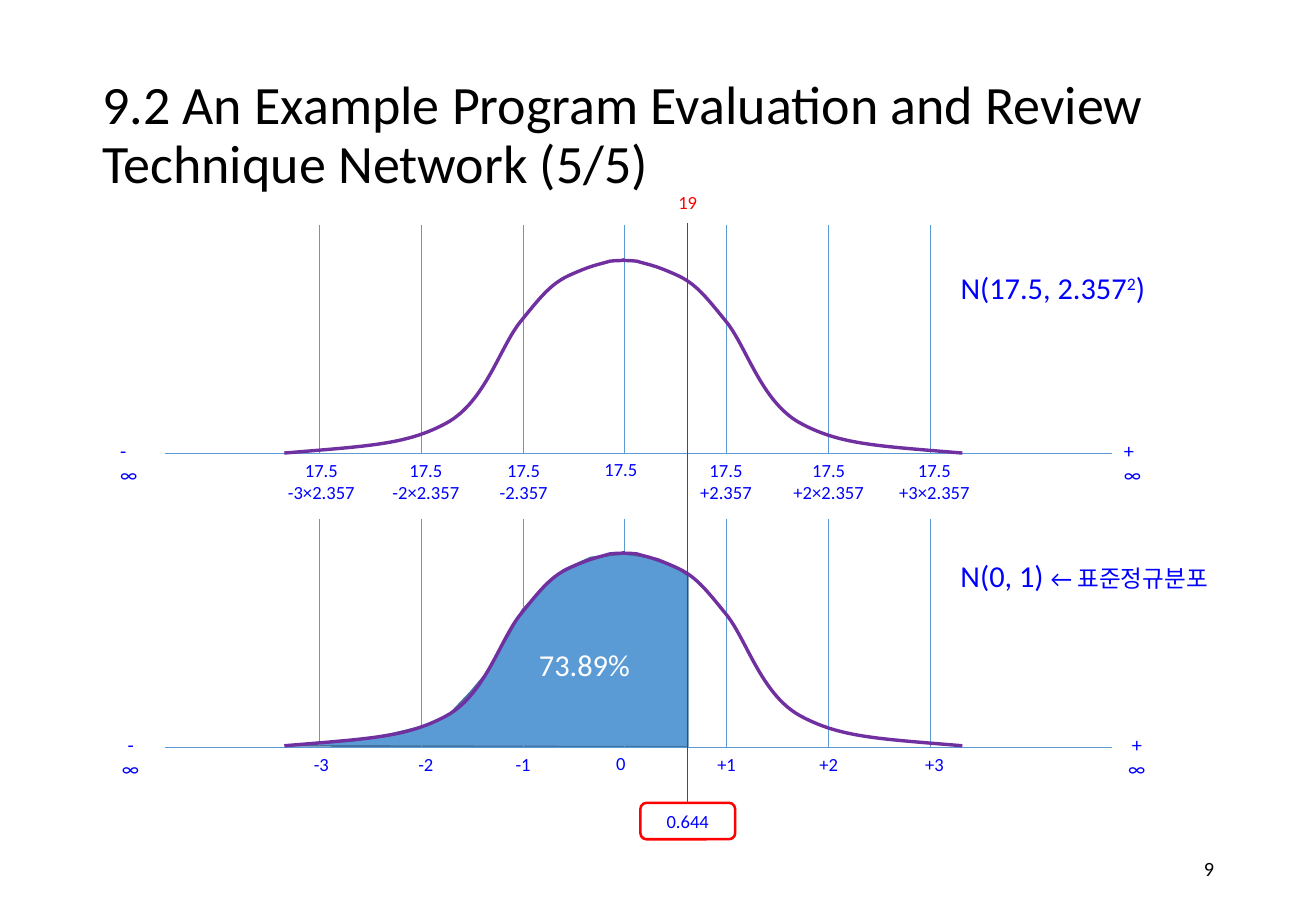
from dataclasses import dataclass

from lxml import etree
from pptx import Presentation
from pptx.dml.color import RGBColor
from pptx.enum.shapes import MSO_CONNECTOR, MSO_SHAPE
from pptx.enum.text import MSO_ANCHOR, PP_ALIGN
from pptx.oxml.ns import qn
from pptx.util import Pt

PX = 9144  # EMU in one px, 100 px to the inch
LEFT, CENTER, RIGHT = PP_ALIGN.LEFT, PP_ALIGN.CENTER, PP_ALIGN.RIGHT
MIDDLE, TOP = MSO_ANCHOR.MIDDLE, MSO_ANCHOR.TOP
STRAIGHT, ROUNDED = MSO_CONNECTOR.STRAIGHT, MSO_SHAPE.ROUNDED_RECTANGLE
TITLE_ONLY = 5
BOX_TOP_SIDE = 0


@dataclass(frozen=True)
class Theme:
    font: str = "Calibri"
    ink: str = "000000"
    label: str = "0000FF"
    marker: str = "FF0000"
    curve: str = "7030A0"
    grid: str = "5B9BD5"
    area: str = "5B9BD5"
    area_edge: str = "43739E"
    on_area: str = "FFFFFF"
    title_pt: int = 32
    formula_pt: int = 18
    note_pt: int = 14
    limit_pt: int = 12
    tick_pt: int = 11


THEME = Theme()

AXIS_LEFT, AXIS_RIGHT = 136, 915
GRID_HEIGHT = 188
MEAN_X, SIGMA_WIDTH = 514.4, 83.8
TOP_AXIS_Y, BOTTOM_AXIS_Y = 373, 615
BOTTOM_CURVE_SHIFT = 241
VALUE_X = 566

# Left edge, width and text of each tick label
NORMAL_TICKS = (
    (226, 77, "17.5\n-3×2.357"), (312, 77, "17.5\n-2×2.357"),
    (401, 60, "17.5\n-2.357"), (487, 48, "17.5"), (566, 63, "17.5\n+2.357"),
    (642, 80, "17.5\n+2×2.357"), (729, 80, "17.5\n+3×2.357"),
)
STANDARD_TICKS = (
    (248, 33, "-3"), (334, 33, "-2"), (414, 33, "-1"), (497, 28, "0"),
    (580, 36, "+1"), (664, 36, "+2"), (751, 36, "+3"),
)
LIMITS = ((89, 37, "-∞"), (915, 41, "+∞"))

# Rising half of the bell: a start, then two control points and an end per curve
BELL_START = (234, 373)
BELL_CURVES = (
    ((305, 367), (335, 366), (368, 348)),
    ((400, 330), (412, 284), (429, 264)),
    ((446, 243), (454, 233), (470, 226)),
    ((488, 218), (492, 218), (502, 215)),
    ((512, 214), (509, 215), (514, 214)),
)
BELL_WIDTH_SUM = 1026  # left x plus its mirrored right x

PROBABILITY_AREA = (
    (235, 614), (266, 611), (290, 610), (319, 605), (352, 597), (369, 589),
    (387, 570), (403, 551), (408, 540), (418, 524), (430, 502), (447, 484),
    (464, 469), (486, 459), (514, 456), (541, 460), (555, 466), (566, 474),
    (566, 615),
)


def rgb(value):
    return RGBColor.from_string(value)


def emu(*lengths):
    return [round(length * PX) for length in lengths]


def write(frame, text, size, color=THEME.label, align=CENTER, anchor=TOP,
          wrap=False, spacing=None):
    """Fill a frame; text is a string with line feeds, or one line of (text, size, baseline) runs."""
    frame.word_wrap = wrap
    frame.vertical_anchor = anchor
    lines = ([[(line, size, 0)] for line in text.split("\n")]
             if isinstance(text, str) else [text])
    for index, runs in enumerate(lines):
        paragraph = frame.add_paragraph() if index else frame.paragraphs[0]
        paragraph.alignment = align
        if spacing:
            paragraph.line_spacing = spacing
        for content, points, baseline in runs:
            run = paragraph.add_run()
            run.text = content
            run.font.size = Pt(points)
            run.font.name = THEME.font
            run.font.color.rgb = rgb(color)
            if baseline:
                run._r.get_or_add_rPr().set("baseline", str(baseline))


def add_text(slide, box, text, size, **style):
    write(slide.shapes.add_textbox(*emu(*box)).text_frame, text, size, **style)


def add_line(slide, start, end, color=THEME.grid):
    line = slide.shapes.add_connector(STRAIGHT, *emu(*start, *end))
    line.line.color.rgb = rgb(color)
    line.line.width = Pt(0.5)
    etree.SubElement(line._element.spPr, qn("a:effectLst"))
    return line


def add_outline(slide, points, color, width, fill=None):
    """Draw a closed, filled outline when fill is given, else an open one."""
    vertices = [emu(*point) for point in points]
    builder = slide.shapes.build_freeform(*vertices[0], scale=1.0)
    builder.add_line_segments(vertices[1:], close=fill is not None)
    outline = builder.convert_to_shape()
    outline.shadow.inherit = False
    outline.line.color.rgb = rgb(color)
    outline.line.width = Pt(width)
    if fill:
        outline.fill.solid()
        outline.fill.fore_color.rgb = rgb(fill)
    else:
        outline.fill.background()
    return outline


def add_half_bell(slide, shift, mirrored):
    """Draw one half of the bell, turning its straight segments into Bézier curves."""
    def place(point):
        x, y = point
        return (BELL_WIDTH_SUM - x if mirrored else x), y + shift

    ends = [place(BELL_START)] + [place(curve[-1]) for curve in BELL_CURVES]
    half = add_outline(slide, ends, THEME.curve, 2)
    segments = list(half._element.iter(qn("a:lnTo")))
    for segment, curve in zip(segments, BELL_CURVES):
        bezier = etree.Element(qn("a:cubicBezTo"))
        for point in curve:
            x, y = emu(*place(point))
            etree.SubElement(bezier, qn("a:pt"),
                             x=str(x - half.left), y=str(y - half.top))
        segment.getparent().replace(segment, bezier)


def add_distribution(slide, axis_y, ticks, curve_shift, limits_align):
    add_line(slide, (AXIS_LEFT, axis_y), (AXIS_RIGHT, axis_y))
    for sigma in range(-3, 4):
        x = round(MEAN_X + sigma * SIGMA_WIDTH)
        add_line(slide, (x, axis_y - GRID_HEIGHT), (x, axis_y))
    mean_tick = ticks[3]
    for tick in ticks:
        left, width, text = tick
        top = axis_y - 1 if tick is mean_tick else axis_y
        height = 47 if "\n" in text else 29
        add_text(slide, (left, top, width, height), text, THEME.tick_pt)
    for left, width, text in LIMITS:
        add_text(slide, (left, axis_y - 17, width, 30), text, THEME.limit_pt,
                 align=limits_align, wrap=True)
    for mirrored in (False, True):
        add_half_bell(slide, curve_shift, mirrored)


def add_value_marker(slide):
    value_box = slide.shapes.add_shape(ROUNDED, *emu(527, 661, 78, 30))
    value_box.shadow.inherit = False
    value_box.fill.background()
    value_box.line.color.rgb = rgb(THEME.marker)
    value_box.line.width = Pt(1.5)
    write(value_box.text_frame, "0.644", THEME.tick_pt, anchor=MIDDLE)
    marker = add_line(slide, (VALUE_X, 184), (VALUE_X, 661), THEME.marker)
    marker.end_connect(value_box, BOX_TOP_SIDE)
    add_text(slide, (548, 152, 36, 29), "19", THEME.tick_pt, color=THEME.marker)


def add_title(slide):
    title = slide.shapes.title
    title.left, title.top, title.width, title.height = emu(74, 40, 934, 145)
    write(title.text_frame,
          "9.2 An Example Program Evaluation and Review Technique Network (5/5)",
          THEME.title_pt, color=THEME.ink, align=LEFT, anchor=MIDDLE,
          wrap=True, spacing=0.9)


def main():
    deck = Presentation()
    deck.slide_width, deck.slide_height = emu(1083, 750)
    slide = deck.slides.add_slide(deck.slide_layouts[TITLE_ONLY])
    add_title(slide)
    add_outline(slide, PROBABILITY_AREA, THEME.area_edge, 1, fill=THEME.area)
    add_distribution(slide, TOP_AXIS_Y, NORMAL_TICKS, 0, LEFT)
    add_distribution(slide, BOTTOM_AXIS_Y, STANDARD_TICKS, BOTTOM_CURVE_SHIFT, CENTER)
    formula = THEME.formula_pt
    add_text(slide, (775, 217, 181, 40),
             [(" N(17.5, 2.357", formula, 0), ("2", formula, 30000), (")", formula, 0)],
             formula, align=LEFT)
    add_text(slide, (775, 454, 243, 40),
             [(" N(0, 1) ", formula, 0), ("← 표준정규분포", THEME.note_pt, 0)],
             formula, align=LEFT)
    add_value_marker(slide)
    add_text(slide, (433, 527, 96, 40), "73.89%", formula, color=THEME.on_area)
    add_text(slide, (765, 695, 244, 40), "9", THEME.limit_pt, color=THEME.ink,
             align=RIGHT, anchor=MIDDLE, wrap=True)
    deck.save("out.pptx")


if __name__ == "__main__":
    main()
